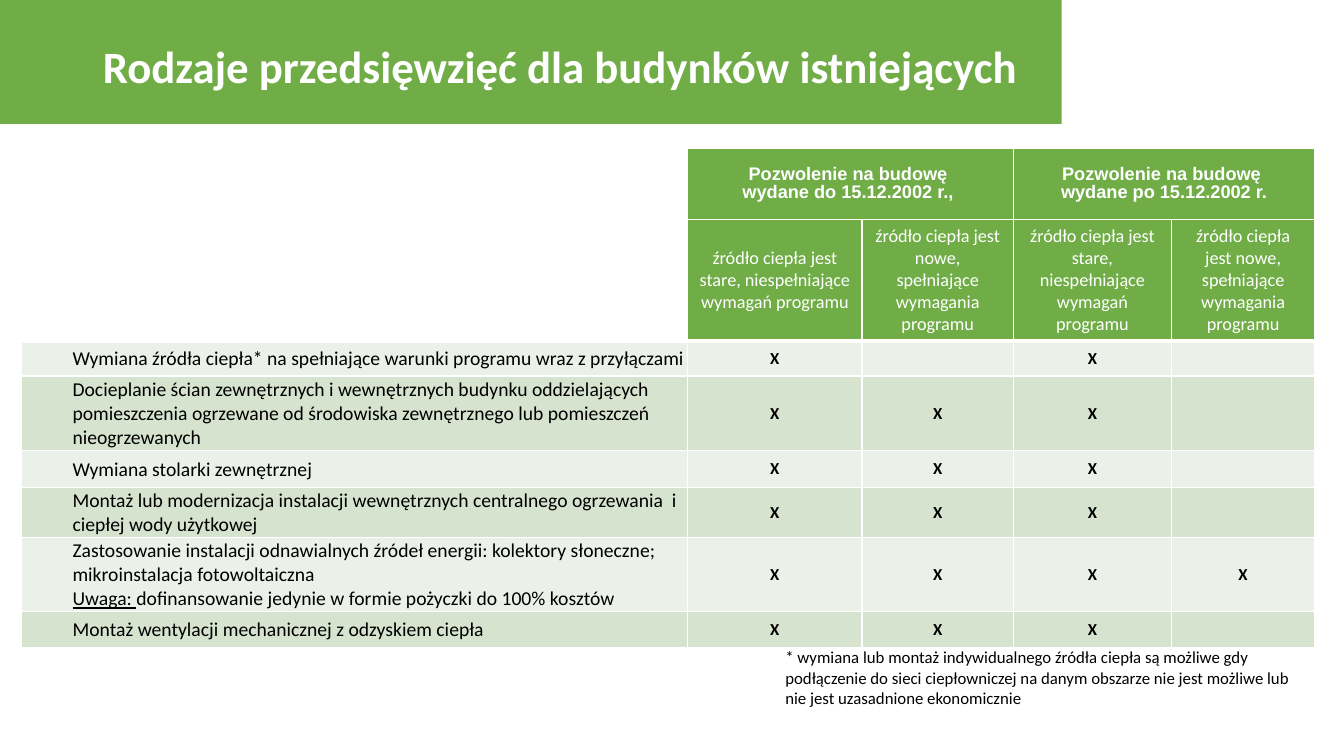
from dataclasses import dataclass

from lxml import etree
from pptx import Presentation
from pptx.dml.color import RGBColor
from pptx.enum.shapes import MSO_SHAPE
from pptx.enum.text import MSO_ANCHOR, MSO_AUTO_SIZE, PP_ALIGN
from pptx.oxml.ns import qn
from pptx.slide import Slide
from pptx.table import Table, _Cell
from pptx.text.text import TextFrame
from pptx.util import Pt

RECT = MSO_SHAPE.RECTANGLE
MIDDLE = MSO_ANCHOR.MIDDLE
FIT = MSO_AUTO_SIZE.SHAPE_TO_FIT_TEXT
LEFT = PP_ALIGN.LEFT
CENTER = PP_ALIGN.CENTER
SCALE = 9144


@dataclass(frozen=True)
class Theme:
    green: str = "70AD47"
    light: str = "EBF1E9"
    dark: str = "D5E3CF"
    white: str = "FFFFFF"
    black: str = "000000"
    body: str = "Calibri"
    head: str = "Arial"
    title: int = 32
    label: int = 13
    task: int = 14
    small: int = 12
    thin: int = 1
    thick: int = 3


@dataclass(frozen=True)
class Box:
    left: int
    top: int
    width: int
    height: int

    def emu(self) -> tuple[int, ...]:
        return tuple(px(n) for n in (self.left, self.top, self.width, self.height))


@dataclass(frozen=True)
class Task:
    text: str
    height: int
    marks: str
    tail: str = ""


THEME = Theme()
TITLE = "Rodzaje przedsięwzięć dla budynków istniejących"
NOTE = (
    "* wymiana lub montaż indywidualnego źródła ciepła są możliwe gdy "
    "podłączenie do sieci ciepłowniczej na danym obszarze nie jest możliwe "
    "lub nie jest uzasadnione ekonomicznie"
)
PERMITS = (
    "Pozwolenie na budowę \vwydane do 15.12.2002 r., ",
    "Pozwolenie na budowę \vwydane po 15.12.2002 r.",
)
SOURCES = (
    "źródło ciepła jest stare, niespełniające wymagań programu",
    "źródło ciepła jest nowe, spełniające wymagania programu",
)
TASKS = (
    Task("Wymiana źródła ciepła* na spełniające warunki programu wraz z przyłączami",
         35, "X-X-"),
    Task("Docieplanie ścian zewnętrznych i wewnętrznych budynku oddzielających "
         "pomieszczenia ogrzewane od środowiska zewnętrznego lub pomieszczeń "
         "nieogrzewanych", 74, "XXX-"),
    Task("Wymiana stolarki zewnętrznej", 37, "XXX-"),
    Task("Montaż lub modernizacja instalacji wewnętrznych centralnego ogrzewania  i "
         "ciepłej wody użytkowej", 49, "XXX-"),
    Task("Zastosowanie instalacji odnawialnych źródeł energii: kolektory słoneczne; "
         "mikroinstalacja fotowoltaiczna\vUwaga: ", 74, "XXXX",
         "dofinansowanie jedynie w formie pożyczki do 100% kosztów"),
    Task("Montaż wentylacji mechanicznej z odzyskiem ciepła", 35, "XXX-"),
)
WIDTHS = (661, 173, 150, 157, 142)
HEIGHTS = (71, 119) + tuple(task.height for task in TASKS)


def px(count: int) -> int:
    return count * SCALE


def style(frame: TextFrame, size: int, tint: str, bold: bool = False,
          face: str = THEME.body, align: PP_ALIGN = LEFT) -> None:
    for para in frame.paragraphs:
        para.alignment = align
        for run in para.runs:
            run.font.size = Pt(size)
            run.font.name = face
            run.font.bold = bold
            run.font.color.rgb = RGBColor.from_string(tint)


def edge(cell: _Cell, top: int, base: int) -> None:
    props = cell._tc.get_or_add_tcPr()
    sides = (("L", THEME.thin), ("R", THEME.thin), ("T", top), ("B", base))
    for spot, (side, width) in enumerate(sides):
        line = etree.Element(qn(f"a:ln{side}"), w=str(Pt(width)))
        fill = etree.SubElement(line, qn("a:solidFill"))
        etree.SubElement(fill, qn("a:srgbClr"), val=THEME.white)
        props.insert(spot, line)


def paint(cell: _Cell, tint: str) -> None:
    cell.fill.solid()
    cell.fill.fore_color.rgb = RGBColor.from_string(tint)
    cell.vertical_anchor = MIDDLE


def add_head(grid: Table) -> None:
    grid.cell(0, 0).merge(grid.cell(1, 0))
    grid.cell(0, 0).fill.background()
    for spot, text in enumerate(PERMITS):
        col = 1 + 2 * spot
        cell = grid.cell(0, col)
        cell.merge(grid.cell(0, col + 1))
        cell.text_frame.text = text
        cell.text_frame.paragraphs[0].line_spacing = 0.9
        style(cell.text_frame, THEME.label, THEME.white, True, THEME.head, CENTER)
        paint(cell, THEME.green)
    for spot, text in enumerate(SOURCES * len(PERMITS)):
        cell = grid.cell(1, spot + 1)
        cell.text_frame.text = text
        style(cell.text_frame, THEME.label, THEME.white, align=CENTER)
        paint(cell, THEME.green)


def add_task(grid: Table, row: int, task: Task, tint: str) -> None:
    cell = grid.cell(row, 0)
    cell.margin_left = cell.margin_right = cell.margin_top = px(1)
    cell.margin_bottom = 0
    cell.text_frame.text = task.text
    para = cell.text_frame.paragraphs[0]
    para.level = 1
    props = para._p.get_or_add_pPr()
    props.set("marL", str(px(50)))
    props.set("indent", "0")
    if task.tail:
        para.runs[-1].font.underline = True
        para.add_run().text = task.tail
    style(cell.text_frame, THEME.task, THEME.black)
    paint(cell, tint)
    for col, mark in enumerate(task.marks, 1):
        cell = grid.cell(row, col)
        cell.margin_top = cell.margin_bottom = 0
        if mark == "X":
            cell.text_frame.text = mark
            style(cell.text_frame, THEME.small, THEME.black, True, align=CENTER)
        paint(cell, tint)


def add_grid(slide: Slide) -> None:
    box = Box(21, 147, sum(WIDTHS), sum(HEIGHTS))
    grid = slide.shapes.add_table(len(HEIGHTS), len(WIDTHS), *box.emu()).table
    grid.first_row = grid.horz_banding = False
    for col, width in zip(grid.columns, WIDTHS):
        col.width = px(width)
    for row, height in zip(grid.rows, HEIGHTS):
        row.height = px(height)
    add_head(grid)
    for spot, task in enumerate(TASKS):
        add_task(grid, spot + 2, task, (THEME.light, THEME.dark)[spot % 2])
    for row in range(len(HEIGHTS)):
        for col in range(len(WIDTHS)):
            last = row == 1 or (row == 0 and col == 0)
            edge(grid.cell(row, col), THEME.thick if row == 2 else THEME.thin,
                 THEME.thick if last else THEME.thin)


def add_title(slide: Slide) -> None:
    band = slide.shapes.add_shape(RECT, *Box(0, 0, 1053, 123).emu())
    band.shadow.inherit = False
    band.fill.solid()
    band.fill.fore_color.rgb = RGBColor.from_string(THEME.green)
    band.line.fill.background()
    title = slide.shapes.title
    title._element.addprevious(band._element)
    title.left, title.top, title.width, title.height = Box(92, 21, 953, 94).emu()
    frame = title.text_frame
    frame.text = TITLE
    frame.vertical_anchor = MIDDLE
    frame.paragraphs[0].line_spacing = 0.9
    style(frame, THEME.title, THEME.white, True)


def add_note(slide: Slide) -> None:
    frame = slide.shapes.add_textbox(*Box(769, 637, 535, 71).emu()).text_frame
    frame.word_wrap = True
    frame.auto_size = FIT
    frame.text = NOTE
    style(frame, THEME.small, THEME.black)


def main() -> None:
    deck = Presentation()
    deck.slide_width, deck.slide_height = px(1333), px(750)
    slide = deck.slides.add_slide(deck.slide_layouts[5])
    add_title(slide)
    add_grid(slide)
    add_note(slide)
    deck.save("out.pptx")


if __name__ == "__main__":
    main()
